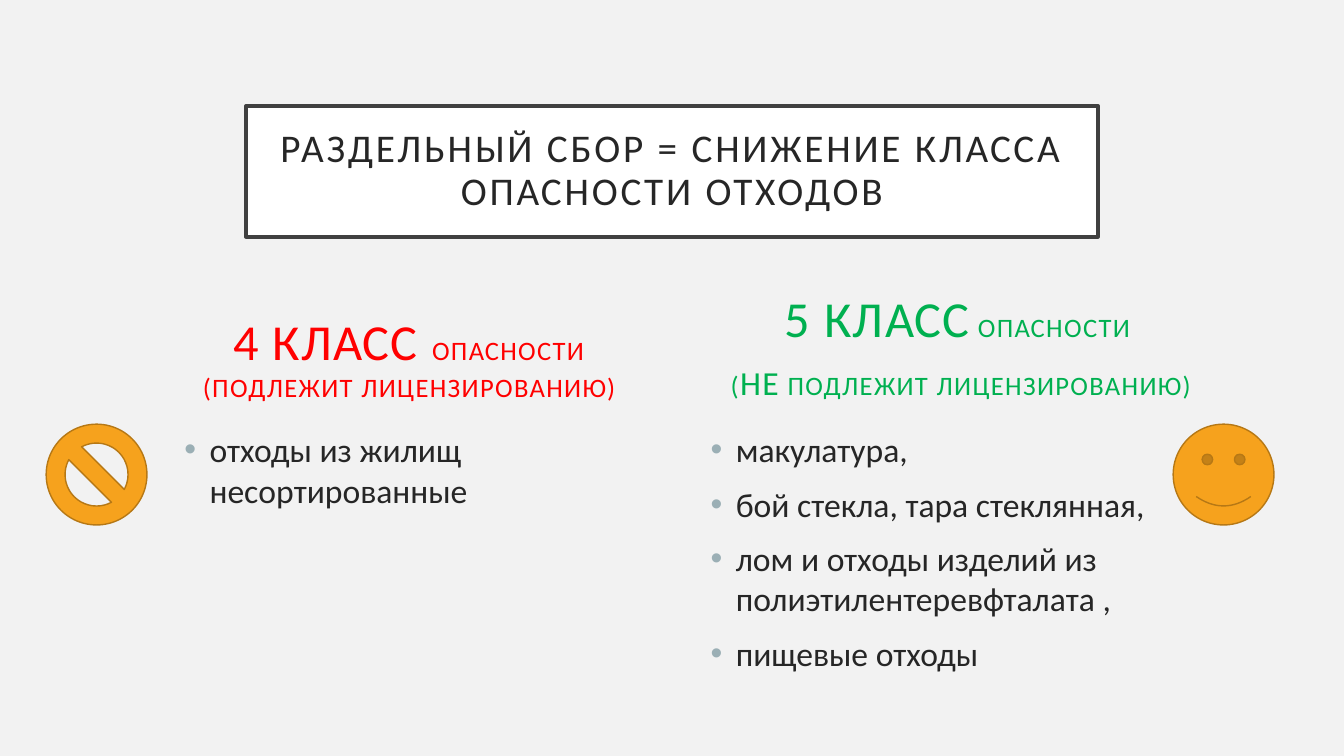
from lxml import etree
from pptx import Presentation
from pptx.dml.color import RGBColor
from pptx.enum.shapes import MSO_SHAPE
from pptx.enum.text import MSO_ANCHOR, MSO_AUTO_SIZE, PP_ALIGN
from pptx.oxml.ns import qn
from pptx.util import Pt

CENTER, LEFT = PP_ALIGN.CENTER, PP_ALIGN.LEFT
TOP, MIDDLE, BOTTOM = MSO_ANCHOR.TOP, MSO_ANCHOR.MIDDLE, MSO_ANCHOR.BOTTOM
NO_AUTOFIT = MSO_AUTO_SIZE.NONE
SMILEY, NO_SYMBOL = MSO_SHAPE.SMILEY_FACE, MSO_SHAPE.NO_SYMBOL
COMPARISON_LAYOUT = 4

FONT = "Calibri"
COLORS = {
    "background": "F2F2F2",
    "text": "262626",
    "frame": "404040",
    "white": "FFFFFF",
    "bullet": "9BAFB5",
    "danger": "FF0000",
    "safe": "00B050",
    "icon": "F6A21D",
    "icon_line": "B67815",
}


class SlideBuilder:
    """Holds the style and the current slide, and adds its elements."""

    def __init__(self, deck):
        self.slide = deck.slides.add_slide(deck.slide_layouts[COMPARISON_LAYOUT])
        self.fill(self.slide.background, "background")

    def color(self, name):
        return RGBColor.from_string(COLORS[name])

    def fill(self, target, name):
        target.fill.solid()
        target.fill.fore_color.rgb = self.color(name)

    def outline(self, shape, name, width):
        shape.line.color.rgb = self.color(name)
        shape.line.width = Pt(width)

    def placeholder(self, index, bounds, anchor):
        box = self.slide.placeholders[index]
        box.left, box.top, box.width, box.height = map(Pt, bounds)
        frame = box.text_frame
        frame.word_wrap = True
        frame.auto_size = NO_AUTOFIT
        frame.vertical_anchor = anchor
        return box

    def paragraphs(self, frame, count, align, color, line_spacing=1.0):
        for number in range(count):
            para = frame.add_paragraph() if number else frame.paragraphs[0]
            para.alignment = align
            para.line_spacing = line_spacing
            para.space_before = Pt(10 if number else 0)
            para.space_after = Pt(0)
            para.font.name = FONT
            para.font.bold = False
            para.font.color.rgb = self.color(color)
            yield para

    def spaced_span(self, para, text, size, spacing):
        span = para.add_run()
        span.text = text
        span.font.size = Pt(size)
        span._r.get_or_add_rPr().set("spc", str(spacing * 100))

    def title(self, text, bounds):
        box = self.placeholder(0, bounds, MIDDLE)
        self.fill(box, "white")
        self.outline(box, "frame", 2.5)
        frame = box.text_frame
        frame.margin_left = frame.margin_right = Pt(14.4)
        frame.margin_top = frame.margin_bottom = Pt(14.4)
        for para in self.paragraphs(frame, 1, CENTER, "text", 0.9):
            self.spaced_span(para, text, 28, 2)

    def heading(self, index, lines, bounds, color):
        frame = self.placeholder(index, bounds, BOTTOM).text_frame
        paras = self.paragraphs(frame, len(lines), CENTER, color)
        for para, spans in zip(paras, lines):
            for text, size in spans:
                self.spaced_span(para, text, size, 1)

    def bullet(self, para):
        properties = para._p.get_or_add_pPr()
        for name in ("a:buClr", "a:buFont", "a:buChar"):
            for old in properties.findall(qn(name)):
                properties.remove(old)
        properties.set("marL", str(Pt(18)))
        properties.set("indent", str(Pt(-18)))
        color = etree.Element(qn("a:buClr"))
        etree.SubElement(color, qn("a:srgbClr"), val=COLORS["bullet"])
        face = etree.Element(qn("a:buFont"), typeface="Arial")
        char = etree.Element(qn("a:buChar"), char="•")
        defaults = properties.find(qn("a:defRPr"))
        for element in (color, face, char):
            defaults.addprevious(element)

    def bullets(self, index, items, bounds):
        frame = self.placeholder(index, bounds, TOP).text_frame
        paras = self.paragraphs(frame, len(items), LEFT, "text")
        for para, item in zip(paras, items):
            self.bullet(para)
            para.text = item
            para.font.size = Pt(24)

    def icon(self, kind, left, top, size=72):
        shape = self.slide.shapes.add_shape(kind, Pt(left), Pt(top), Pt(size), Pt(size))
        shape.shadow.inherit = False
        self.fill(shape, "icon")
        self.outline(shape, "icon_line", 1)


def main():
    deck = Presentation()
    deck.slide_width, deck.slide_height = Pt(960), Pt(540)
    page = SlideBuilder(deck)

    heading_top, heading_height = 182, 109
    list_top, list_height = 303, 204.5

    page.title(
        "РАЗДЕЛЬНЫЙ СБОР = СНИЖЕНИЕ КЛАССА ОПАСНОСТИ ОТХОДОВ",
        (175.7, 75.6, 608.6, 93.6),
    )
    page.heading(
        1,
        [[("4 КЛАСС ", 36), ("ОПАСНОСТИ (ПОДЛЕЖИТ ЛИЦЕНЗИРОВАНИЮ)", 19)]],
        (124.5, heading_top, 336, heading_height),
        "danger",
    )
    page.bullets(
        2,
        ["отходы из жилищ несортированные"],
        (124.5, list_top, 336, list_height),
    )
    page.heading(
        3,
        [
            [("5 КЛАСС", 36), (" ОПАСНОСТИ ", 19)],
            [("(", 19), ("НЕ", 24), (" ПОДЛЕЖИТ ЛИЦЕНЗИРОВАНИЮ)", 19)],
        ],
        (499, heading_top, 375, heading_height),
        "safe",
    )
    page.bullets(
        4,
        [
            "макулатура,",
            "бой стекла, тара стеклянная,",
            "лом и отходы изделий из полиэтилентеревфталата ,",
            "пищевые отходы",
        ],
        (500.4, list_top, 335, list_height),
    )
    page.icon(SMILEY, 838, list_top)
    page.icon(NO_SYMBOL, 33, list_top)
    deck.save("out.pptx")


if __name__ == "__main__":
    main()
